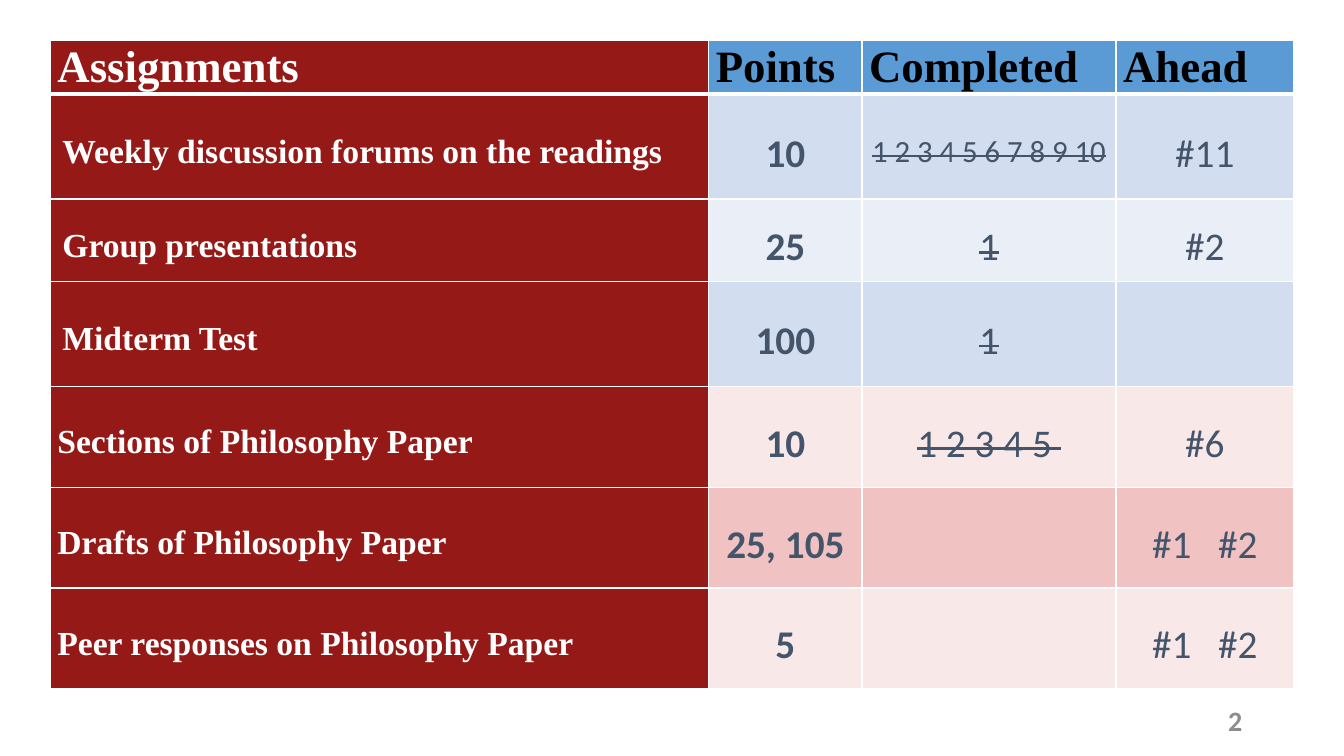
from lxml import etree
from pptx import Presentation
from pptx.dml.color import RGBColor
from pptx.enum.text import MSO_ANCHOR, PP_ALIGN
from pptx.oxml.ns import qn
from pptx.util import Inches, Pt

LEFT, CENTER, RIGHT = PP_ALIGN.LEFT, PP_ALIGN.CENTER, PP_ALIGN.RIGHT
MIDDLE = MSO_ANCHOR.MIDDLE

SERIF, SANS = "Times New Roman", "Calibri"
WHITE, BLACK, SLATE, GRAY = "FFFFFF", "000000", "44546A", "8C8C8C"
RED, BLUE = "951A17", "5B9BD5"

HEADERS = ["Assignments", "Points", "Completed", "Ahead"]
# Texts of the four columns, row height, row fill, indent of the first column
ASSIGNMENTS = [
    (["Weekly discussion forums on the readings", "10",
      "1 2 3 4 5 6 7 8 9 10", "#11"], 1.04, "D2DEEF", 0.05),
    (["Group presentations", "25", "1", "#2"], 0.82, "EAEFF7", 0.05),
    (["Midterm Test", "100", "1", ""], 1.04, "D2DEEF", 0.05),
    (["Sections of Philosophy Paper", "10", "1 2 3 4 5 ", "#6"],
     1, "F9E8E8", 0),
    (["Drafts of Philosophy Paper", "25, 105", "", "#1   #2"],
     1, "F0C2C2", 0),
    (["Peer responses on Philosophy Paper", "5", "", "#1   #2"],
     1, "F9E8E8", 0),
]
COL_WIDTHS = [6.53, 1.52, 2.52, 1.76]
HEADER_HEIGHT = 0.36


def rgb(color):
    return RGBColor.from_string(color)


class SlideBuilder:
    def __init__(self, prs):
        self.s = prs.slides.add_slide(prs.slide_layouts[6])

    def style_text(self, tf, text, size, font, color, bold=True, align=LEFT,
                   spacing=None, strike=False, indent=0):
        tf.text = text
        p = tf.paragraphs[0]
        p.alignment = align
        if spacing:
            p.line_spacing = spacing
        if indent:
            p._p.get_or_add_pPr().set("marL", str(Inches(indent)))
        for r in p.runs:
            r.font.size, r.font.name, r.font.bold = Pt(size), font, bold
            r.font.color.rgb = rgb(color)
            if strike:
                r._r.get_or_add_rPr().set("strike", "sngStrike")

    def text(self, x, y, w, h, text, **style):
        tf = self.s.shapes.add_textbox(
            Inches(x), Inches(y), Inches(w), Inches(h)).text_frame
        tf.word_wrap = True
        tf.vertical_anchor = MIDDLE
        self.style_text(tf, text, **style)

    def table(self, x, y, widths, heights):
        table = self.s.shapes.add_table(
            len(heights), len(widths), Inches(x), Inches(y),
            Inches(sum(widths)), Inches(sum(heights))).table
        table.first_row = table.horz_banding = False
        for col, width in zip(table.columns, widths):
            col.width = Inches(width)
        for row, height in zip(table.rows, heights):
            row.height = Inches(height)
        return table

    def cell(self, cell, text, fill, top=1, bottom=1, **style):
        cell.margin_left = cell.margin_right = Inches(0.07)
        cell.margin_top = cell.margin_bottom = 0
        cell.vertical_anchor = MIDDLE
        # Borders come before the fill in the cell properties
        tcPr = cell._tc.get_or_add_tcPr()
        for side, width in (("L", 1), ("R", 1), ("T", top), ("B", bottom)):
            ln = etree.SubElement(tcPr, qn(f"a:ln{side}"), w=str(Pt(width)))
            solid = etree.SubElement(ln, qn("a:solidFill"))
            etree.SubElement(solid, qn("a:srgbClr"), val=WHITE)
        cell.fill.solid()
        cell.fill.fore_color.rgb = rgb(fill)
        self.style_text(cell.text_frame, text, **style)


def main():
    prs = Presentation()
    prs.slide_width, prs.slide_height = Inches(13.33), Inches(7.5)
    slide = SlideBuilder(prs)

    # Slide number
    slide.text(9.42, 6.95, 3, 0.4, "2", size=20, font=SANS, color=GRAY,
               align=RIGHT)

    # Table grid
    heights = [HEADER_HEIGHT] + [height for _, height, _, _ in ASSIGNMENTS]
    table = slide.table(0.5, 0.4, COL_WIDTHS, heights)

    # Header row
    for col, text in enumerate(HEADERS):
        first = col == 0
        slide.cell(table.cell(0, col), text, RED if first else BLUE, bottom=3,
                   size=32, font=SERIF, color=WHITE if first else BLACK)

    # Assignment rows
    for row, (texts, _, fill, indent) in enumerate(ASSIGNMENTS, 1):
        top = 3 if row == 1 else 1
        slide.cell(table.cell(row, 0), texts[0], RED, top=top, size=24,
                   font=SERIF, color=WHITE, spacing=1.3, indent=indent)
        for col, text in enumerate(texts[1:], 1):
            size = 22 if len(text) > 10 else 28
            slide.cell(table.cell(row, col), text, fill, top=top, size=size,
                       font=SANS, color=SLATE, bold=col == 1, align=CENTER,
                       spacing=1.3, strike=col == 2)

    prs.save("out.pptx")


if __name__ == "__main__":
    main()
